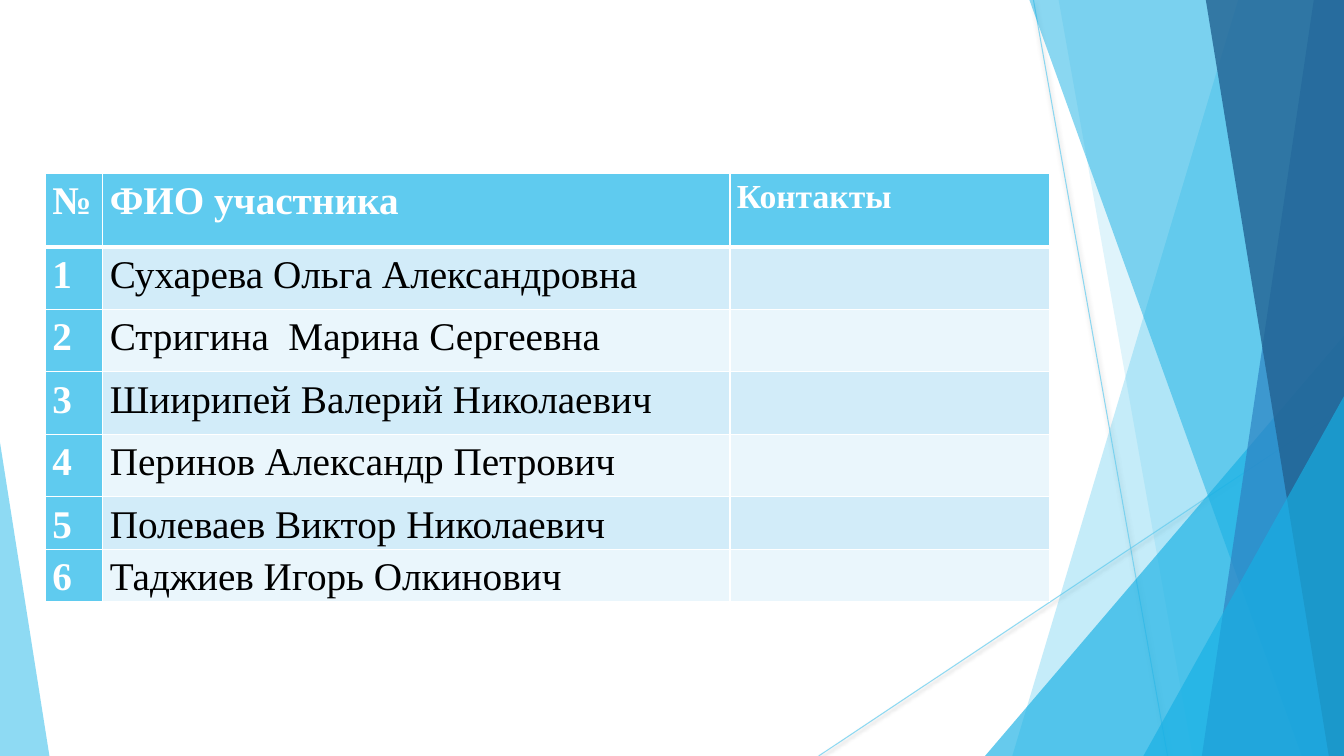
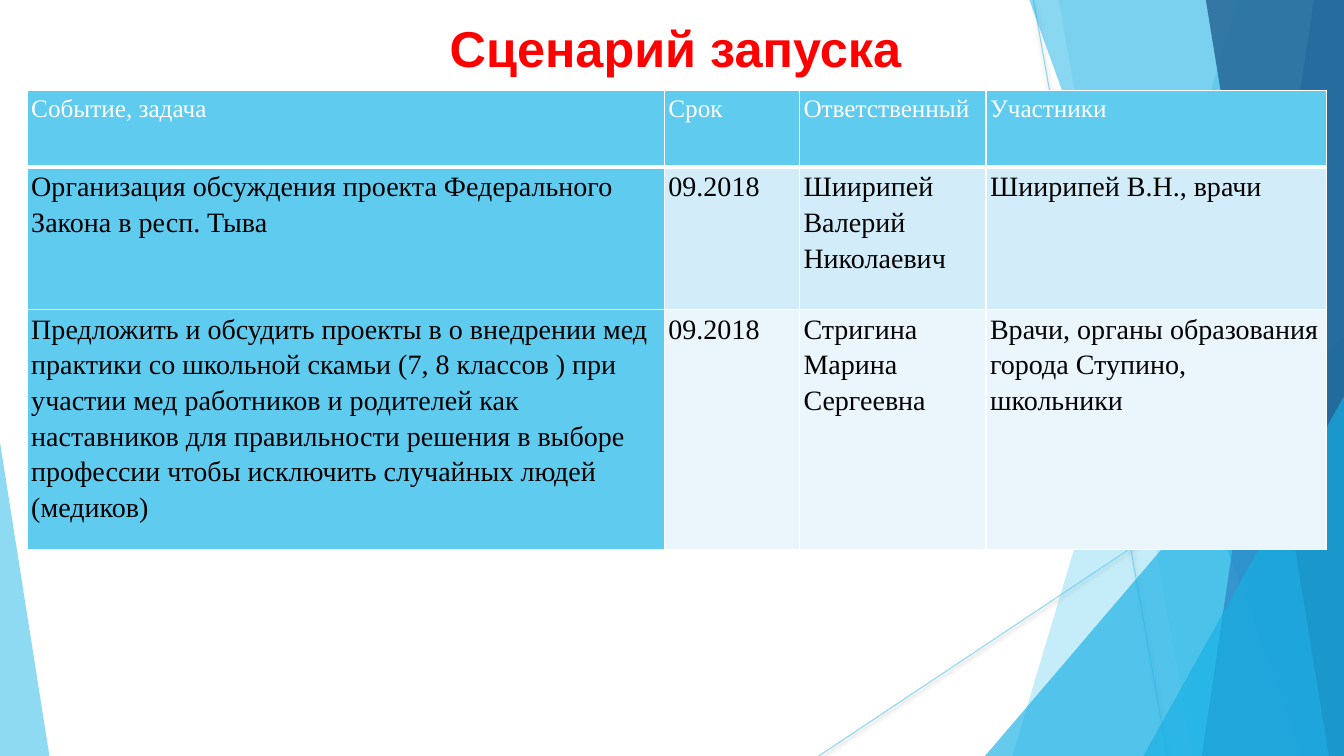
import pptx
import pptx.util
import pptx.dml.color
import pptx.enum.shapes
import pptx.enum.text
import pptx.oxml
import pptx.oxml.ns
from lxml import etree

Inches = pptx.util.Inches
Pt = pptx.util.Pt
qn = pptx.oxml.ns.qn
SHAPE = pptx.enum.shapes.MSO_SHAPE

COLORS = {
    "sky": "5FCBEF", "cyan": "17B0E4", "blue": "2E83C3", "navy": "226292",
    "band": "D2ECF9", "pale": "EAF6FC",
    "white": "FFFFFF", "black": "000000", "red": "FF0000",
}
SERIF, SANS = "Times New Roman", "Arial"
WIDE, HIGH = 13.33, 7.5
PAGE = (0, 0, WIDE, HIGH)

# Facets from back to front: colour, opacity, outline
FACETS = [
    ("sky", 36, [(12.28, 0), (WIDE, 0), (WIDE, HIGH), (10.04, HIGH)]),
    ("sky", 20, [(10.5, 0), (WIDE, 0), (WIDE, HIGH), (11.83, HIGH)]),
    ("cyan", 66, [(WIDE, 3.33), (WIDE, HIGH), (9.77, HIGH)]),
    ("cyan", 50, [(10.21, 0), (WIDE, 0), (WIDE, HIGH), (12.91, HIGH)]),
    ("blue", 70, [(13.03, 0), (WIDE, 0), (WIDE, HIGH), (11.92, HIGH)]),
    ("navy", 80, [(11.96, 0), (WIDE, 0), (WIDE, HIGH), (13.18, HIGH)]),
    ("cyan", 66, [(WIDE, 3.93), (WIDE, HIGH), (11.34, HIGH)]),
    ("sky", 70, [(0, 4.39), (0.49, HIGH), (0, HIGH)]),
]
RAYS = [((10.25, 0), (11.58, HIGH)), ((WIDE, 4.03), (8.12, HIGH))]

SHADOW = (
    '<a:effectLst xmlns:a="http://schemas.openxmlformats.org/drawingml/2006/main">'
    '<a:outerShdw blurRad="39370" dist="20320" dir="5400000" rotWithShape="0">'
    '<a:srgbClr val="000000"><a:alpha val="38000"/></a:srgbClr>'
    '</a:outerShdw></a:effectLst>'
)


def color(name):
    return pptx.dml.color.RGBColor.from_string(COLORS[name])


def fade(shape, percent):
    for node in shape.element.spPr.iter(qn("a:srgbClr")):
        etree.SubElement(node, qn("a:alpha"), val=str(percent * 1000))


def style(para, face, size, tone, bold):
    para.font.name = face
    para.font.size = Pt(size)
    para.font.color.rgb = color(tone)
    para.font.bold = bold


def add_decor(slide, box):
    left, top = box[:2]

    def place(point):
        return Inches(left + point[0]), Inches(top + point[1])

    # Thin rays
    for start, end in RAYS:
        ray = slide.shapes.add_connector(
            pptx.enum.shapes.MSO_CONNECTOR.STRAIGHT, *place(start), *place(end))
        ray.line.color.rgb = color("sky")
        ray.line.width = Pt(0.75)
        fade(ray, 70)
        ray.element.spPr.append(pptx.oxml.parse_xml(SHADOW))

    # Clear facets
    for tone, percent, points in FACETS:
        pen = slide.shapes.build_freeform(*place(points[0]))
        pen.add_line_segments([place(point) for point in points[1:]], close=True)
        facet = pen.convert_to_shape()
        facet.shadow.inherit = False
        facet.fill.solid()
        facet.fill.fore_color.rgb = color(tone)
        facet.line.fill.background()
        fade(facet, percent)


def add_title(slide, box, text):
    frame = slide.shapes.add_textbox(*map(Inches, box)).text_frame
    frame.word_wrap = True
    frame.vertical_anchor = pptx.enum.text.MSO_ANCHOR.MIDDLE
    frame.text = text
    para = frame.paragraphs[0]
    para.alignment = pptx.enum.text.PP_ALIGN.CENTER
    style(para, SANS, 36, "red", True)


def set_edges(cell, row):
    # Header and body meet in a thick rule
    widths = {"L": 1, "R": 1, "T": 3 if row == 1 else 1, "B": 3 if row == 0 else 1}
    props = cell._tc.get_or_add_tcPr()
    for spot, (side, width) in enumerate(widths.items()):
        edge = etree.Element(qn("a:ln" + side), w=str(Pt(width)))
        fill = etree.SubElement(edge, qn("a:solidFill"))
        etree.SubElement(fill, qn("a:srgbClr"), val=COLORS["white"])
        props.insert(spot, edge)


def add_grid(slide, spot, cols, rows, data, inset, look):
    """look(row, col) gives the size, colour and weight of a cell's text."""
    frame = slide.shapes.add_table(
        len(rows), len(cols), *map(Inches, (*spot, sum(cols), sum(rows))))
    grid = frame.table
    grid.first_row = grid.horz_banding = False
    for col, width in enumerate(cols):
        grid.columns[col].width = Inches(width)
    for row, height in enumerate(rows):
        grid.rows[row].height = Inches(height)
        for col, text in enumerate(data[row]):
            cell = grid.cell(row, col)
            cell.margin_left = cell.margin_right = Inches(inset)
            cell.margin_top = cell.margin_bottom = 0
            tone = "band" if row % 2 else "pale"
            cell.fill.solid()
            cell.fill.fore_color.rgb = color("sky" if 0 in (row, col) else tone)
            set_edges(cell, row)
            cell.text = text
            for para in cell.text_frame.paragraphs:
                para.line_spacing = 1.15
                style(para, SERIF, *look(row, col))


def add_team(slide, box):
    names = [
        "Сухарева Ольга Александровна", "Стригина  Марина Сергеевна",
        "Шиирипей Валерий Николаевич", "Перинов Александр Петрович",
        "Полеваев Виктор Николаевич", "Таджиев Игорь Олкинович",
    ]
    data = [("№", "ФИО участника", "Контакты")]
    data += [(str(num), name, "") for num, name in enumerate(names, 1)]

    def look(row, col):
        strong = 0 in (row, col)
        size = 24 if (row, col) == (0, 2) else 28
        return size, "white" if strong else "black", strong

    add_grid(slide, (box[0] + 0.45, box[1] + 1.72), [0.57, 6.22, 3.17],
             [0.73] + [0.62] * 4 + [0.52] * 2, data, 0.07, look)


def add_plan(slide, box):
    left, top = box[:2]
    add_title(slide, (left + 2, top + 0.06, 9.4, 0.83), "Сценарий запуска")
    data = [
        ("Событие, задача", "Срок", "Ответственный", "Участники"),
        ("Организация обсуждения проекта Федерального Закона в респ. Тыва",
         "09.2018", "Шиирипей Валерий Николаевич", "Шиирипей В.Н., врачи"),
        ("Предложить и обсудить проекты в о внедрении мед практики со школьной "
         "скамьи (7, 8 классов ) при участии мед работников и родителей как "
         "наставников для правильности решения в выборе профессии чтобы "
         "исключить случайных людей (медиков)",
         "09.2018", "Стригина Марина Сергеевна",
         "Врачи, органы образования города Ступино,\nшкольники"),
    ]

    def look(row, col):
        return (20, "black", False) if row else (18, "white", False)

    add_grid(slide, (left + 0.27, top + 0.9), [6.32, 1.34, 1.85, 3.38],
             [0.76, 1.41, 2.38], data, 0.04, look)


def main():
    deck = pptx.Presentation()
    deck.slide_width, deck.slide_height = Inches(WIDE), Inches(HIGH)
    for build in (add_team, add_plan):
        slide = deck.slides.add_slide(deck.slide_layouts[6])
        add_decor(slide, PAGE)
        build(slide, PAGE)
    deck.save("out.pptx")


if __name__ == "__main__":
    main()
